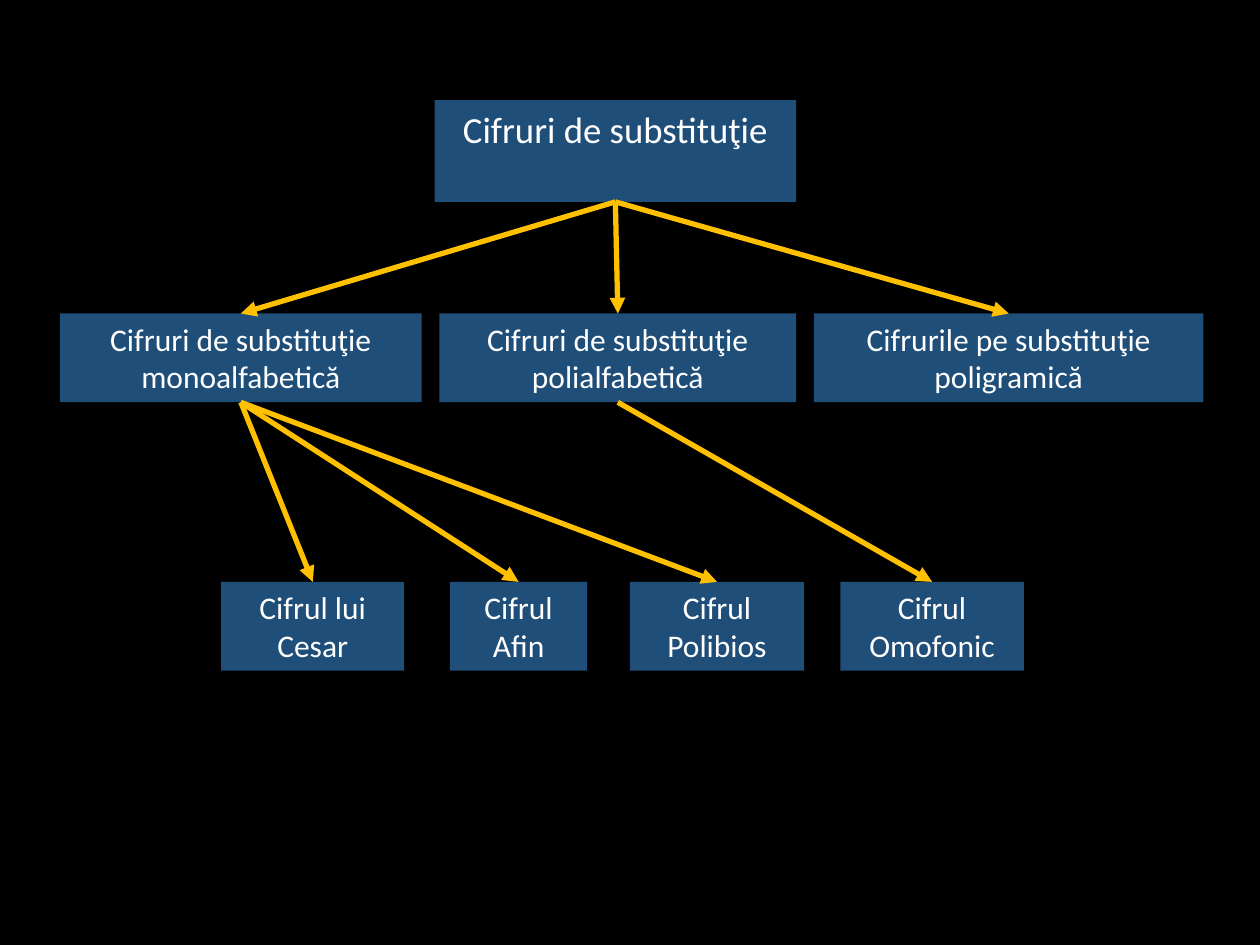
from lxml.etree import SubElement
from pptx import Presentation
from pptx.dml.color import RGBColor
from pptx.enum.shapes import MSO_CONNECTOR, MSO_SHAPE
from pptx.enum.text import MSO_ANCHOR, PP_ALIGN
from pptx.oxml.ns import qn
from pptx.util import Cm, Pt

COLORS = {"background": "000000", "box": "1F4E79", "text": "FFFFFF", "arrow": "FFC000"}
FONT = "Calibri"
BOTTOM, TOP = 2, 0  # connection sites of a rectangle

# Levels of the tree: top, height (cm), text size, boxes (key, text, left, width)
levels = [
    (2.02, 2.05, 21, [("root", "Cifruri de substituţie", 8.76, 7.29)]),
    (6.32, 1.79, 18, [
        ("mono", "Cifruri de substituţie monoalfabetică", 1.21, 7.29),
        ("poly", "Cifruri de substituţie polialfabetică", 8.86, 7.19),
        ("polygram", "Cifrurile pe substituţie poligramică", 16.41, 7.85),
    ]),
    (11.73, 1.79, 18, [
        ("cesar", "Cifrul lui Cesar", 4.46, 3.69),
        ("afin", "Cifrul Afin", 9.07, 2.77),
        ("polibios", "Cifrul Polibios", 12.7, 3.51),
        ("omofonic", "Cifrul Omofonic", 16.94, 3.7),
    ]),
]
children = {
    "root": ["mono", "poly", "polygram"],
    "mono": ["cesar", "afin", "polibios"],
    "poly": ["omofonic"],
}


def color(name):
    return RGBColor.from_string(COLORS[name])


def add_box(slide, text, left, top, width, height, size):
    box = slide.shapes.add_shape(
        MSO_SHAPE.RECTANGLE, Cm(left), Cm(top), Cm(width), Cm(height))
    box.shadow.inherit = False
    box.fill.solid()
    box.fill.fore_color.rgb = color("box")
    box.line.fill.background()
    frame = box.text_frame
    frame.word_wrap = True
    frame.vertical_anchor = MSO_ANCHOR.TOP
    frame.text = text
    paragraph = frame.paragraphs[0]
    paragraph.alignment = PP_ALIGN.CENTER
    font = paragraph.runs[0].font
    font.name, font.size = FONT, Pt(size)
    font.color.rgb = color("text")
    return box


def add_arrow(slide, parent, child):
    arrow = slide.shapes.add_connector(MSO_CONNECTOR.STRAIGHT, 0, 0, 0, 0)
    arrow.begin_connect(parent, BOTTOM)
    arrow.end_connect(child, TOP)
    arrow.line.color.rgb = color("arrow")
    arrow.line.width = Pt(3)
    SubElement(arrow.line._get_or_add_ln(), qn("a:tailEnd"), type="triangle")
    SubElement(arrow._element.spPr, qn("a:effectLst"))


presentation = Presentation()
presentation.slide_width, presentation.slide_height = Cm(25.4), Cm(19.05)
slide = presentation.slides.add_slide(presentation.slide_layouts[6])
slide.background.fill.solid()
slide.background.fill.fore_color.rgb = color("background")

# Cipher boxes
ciphers = {}
for top, height, size, boxes in levels:
    for key, text, left, width in boxes:
        ciphers[key] = add_box(slide, text, left, top, width, height, size)

# Arrows from each class to its kinds
for parent, kinds in children.items():
    for kind in kinds:
        add_arrow(slide, ciphers[parent], ciphers[kind])

presentation.save("out.pptx")
